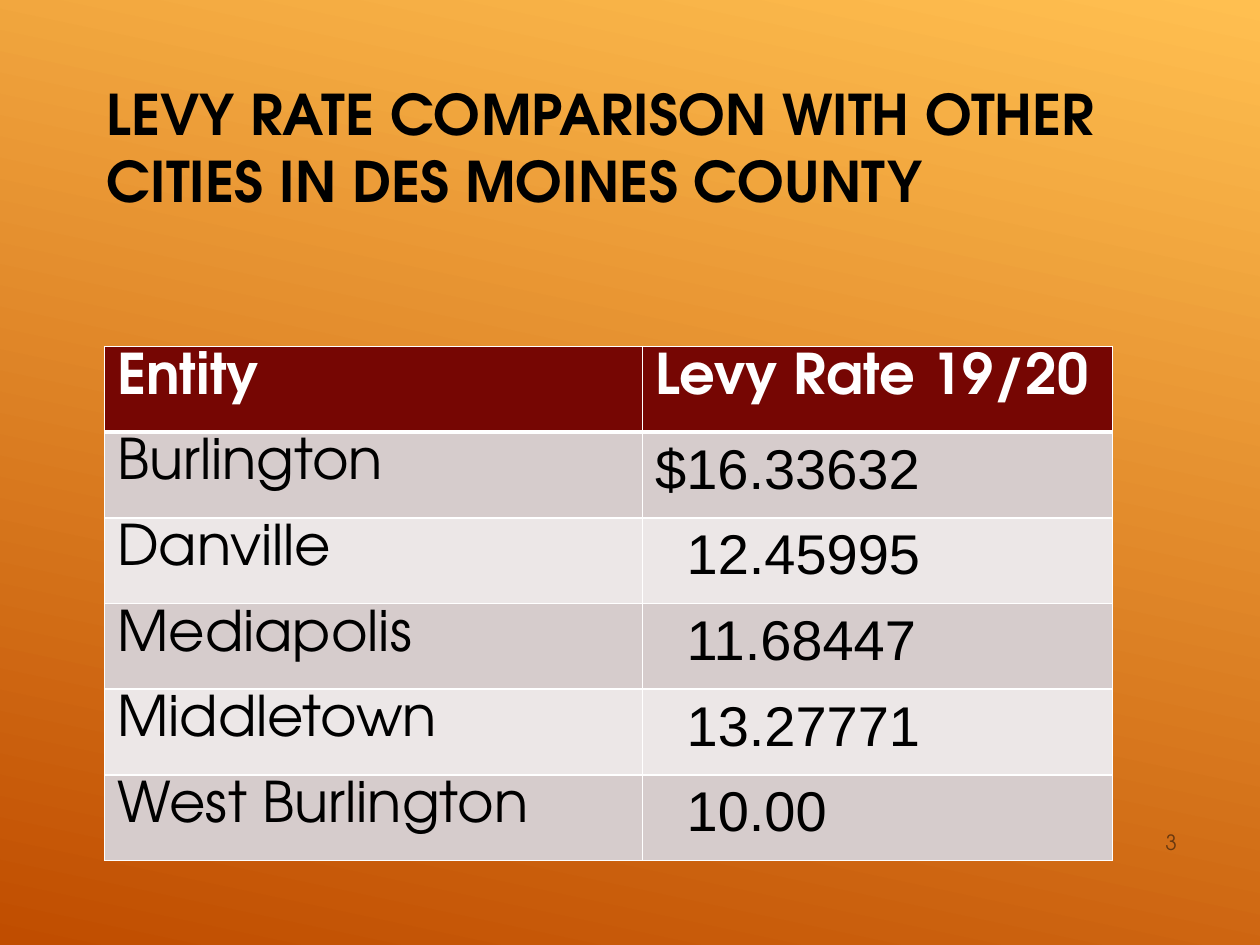
from dataclasses import dataclass

from lxml.etree import SubElement
from pptx import Presentation
from pptx.dml.color import RGBColor as RGB
from pptx.enum.text import MSO_ANCHOR as Anchor, PP_ALIGN as Align
from pptx.oxml.ns import qn
from pptx.util import Inches, Pt


@dataclass(frozen=True)
class Theme:
    face: str = "TeX Gyre Adventor"
    plain: str = "Arial"
    big: int = 32
    small: int = 12
    light: str = "FFBF50"
    dark: str = "C04D00"
    black: str = "000000"
    white: str = "FFFFFF"
    brown: str = "68380F"
    head: str = "760603"
    bands: tuple = ("D6CCCC", "ECE7E7")


@dataclass(frozen=True)
class Style:
    size: int
    color: str
    face: str = Theme.face
    bold: bool = False
    align: Align = Align.LEFT


@dataclass(frozen=True)
class Levy:
    city: str
    rate: str


THEME = Theme()
TITLE = Style(THEME.big, THEME.black, bold=True)
HEAD = Style(THEME.big, THEME.white, bold=True)
NAME = Style(THEME.big, THEME.black)
RATE = Style(THEME.big, THEME.black, THEME.plain)
PAGE = Style(THEME.small, THEME.brown, align=Align.RIGHT)

LEVIES = [
    Levy("Burlington", "$16.33632"),
    Levy("Danville", "12.45995"),
    Levy("Mediapolis", "11.68447"),
    Levy("Middletown", "13.27771"),
    Levy("West Burlington", "10.00"),
]
COLS = (4.27, 3.73)
ROW = 0.68
PAD = 0.1
INDENT = 0.25  # width of the dollar sign, so that the digits line up


def write(frame, text: str, style: Style) -> None:
    frame.text = text
    para = frame.paragraphs[0]
    para.alignment = style.align
    font = para.runs[0].font
    font.name, font.size, font.bold = style.face, Pt(style.size), style.bold
    font.color.rgb = RGB.from_string(style.color)


def add_text(slide, box: tuple, text: str, style: Style, anchor: Anchor) -> None:
    frame = slide.shapes.add_textbox(*map(Inches, box)).text_frame
    frame.word_wrap = True
    frame.vertical_anchor = anchor
    write(frame, text, style)


def edge(cell, base: float) -> None:
    """Draw white cell borders; base is the width of the bottom one in points."""
    props = cell._tc.get_or_add_tcPr()
    for spot, (side, width) in enumerate(
        (("lnL", 1), ("lnR", 1), ("lnT", 1), ("lnB", base))
    ):
        line = SubElement(props, qn(f"a:{side}"), w=str(Pt(width)))
        fill = SubElement(line, qn("a:solidFill"))
        SubElement(fill, qn("a:srgbClr"), val=THEME.white)
        props.insert(spot, line)


def fill_cell(cell, text: str, style: Style, fill: str, base: float = 1) -> None:
    write(cell.text_frame, text, style)
    cell.fill.solid()
    cell.fill.fore_color.rgb = RGB.from_string(fill)
    edge(cell, base)


def add_rates(slide, left: float, top: float) -> None:
    count = len(LEVIES) + 1
    box = (left, top, sum(COLS), ROW * count)
    table = slide.shapes.add_table(count, len(COLS), *map(Inches, box)).table
    table.horz_banding = False
    for col, width in zip(table.columns, COLS):
        col.width = Inches(width)
    for row in table.rows:
        row.height = Inches(ROW)

    for col, text in enumerate(("Entity", "Levy Rate 19/20")):
        fill_cell(table.cell(0, col), text, HEAD, THEME.head, 3)
    for row, levy in enumerate(LEVIES, 1):
        band = THEME.bands[(row - 1) % 2]
        fill_cell(table.cell(row, 0), levy.city, NAME, band)
        cell = table.cell(row, 1)
        fill_cell(cell, levy.rate, RATE, band)
        if not levy.rate.startswith("$"):
            cell.margin_left = Inches(PAD + INDENT)


def paint(slide) -> None:
    """Fill the background with the orange gradient."""
    fill = slide.background.fill
    fill.gradient()
    fill.gradient_angle = 258
    for stop, color in zip(fill.gradient_stops, (THEME.light, THEME.dark)):
        stop.color.rgb = RGB.from_string(color)


def main() -> None:
    deck = Presentation()
    deck.slide_width, deck.slide_height = Inches(10), Inches(7.5)
    slide = deck.slides.add_slide(deck.slide_layouts[6])
    paint(slide)
    add_text(
        slide,
        (0.75, 0, 8.5, 2.33),
        "LEVY RATE COMPARISON WITH OTHER CITIES IN DES MOINES COUNTY",
        TITLE,
        Anchor.MIDDLE,
    )
    add_rates(slide, 0.83, 2.75)
    add_text(slide, (8.5, 6.1, 0.94, 0.73), "3", PAGE, Anchor.BOTTOM)
    deck.save("out.pptx")


if __name__ == "__main__":
    main()
